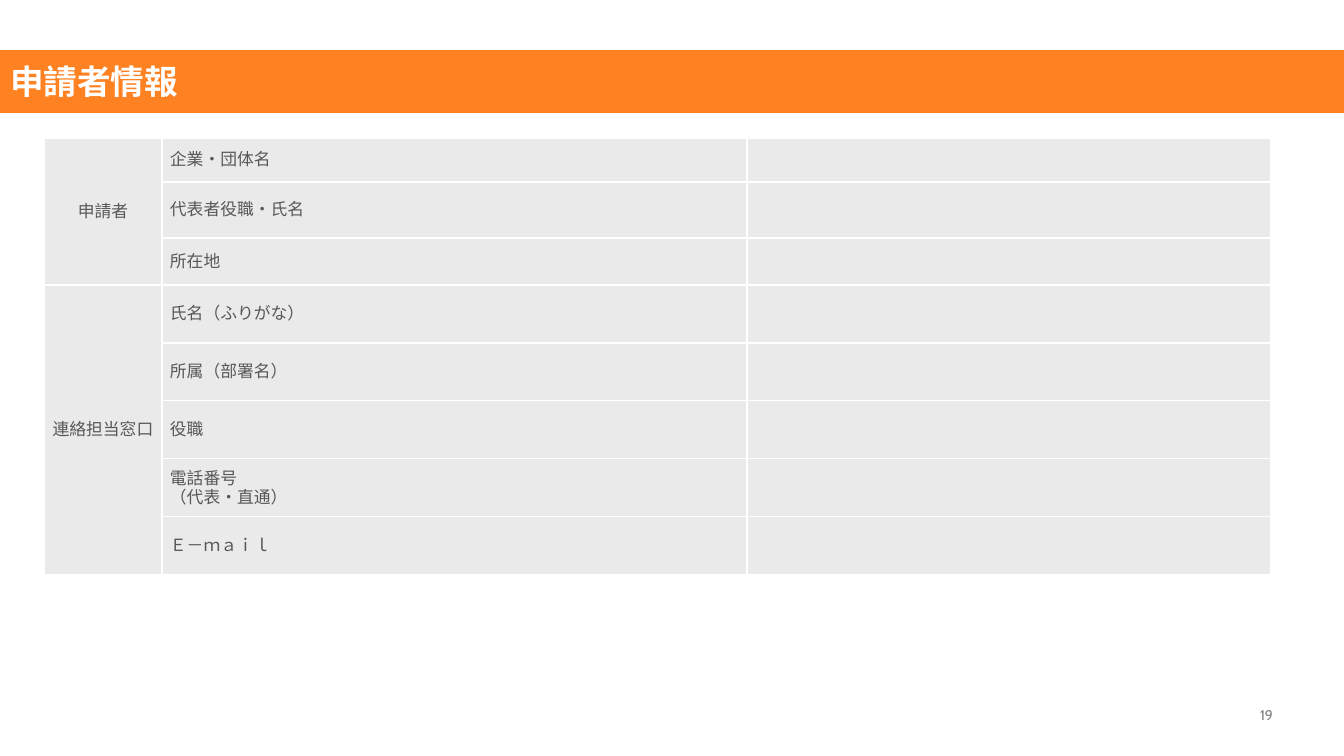
from dataclasses import dataclass

from lxml import etree
from pptx import Presentation
from pptx.dml.color import RGBColor
from pptx.enum.text import MSO_ANCHOR, PP_ALIGN
from pptx.oxml.ns import qn
from pptx.util import Emu, Pt

MIDDLE, BOTTOM = MSO_ANCHOR.MIDDLE, MSO_ANCHOR.BOTTOM
LEFT, RIGHT = PP_ALIGN.LEFT, PP_ALIGN.RIGHT
CENTER, JUSTIFY = PP_ALIGN.CENTER, PP_ALIGN.JUSTIFY
EMU_PER_PX = 914400 / 100.8


@dataclass(frozen=True)
class Theme:
    banner: str = "FF8222"
    white: str = "FFFFFF"
    cell: str = "EAEAEA"
    text: str = "575757"
    muted: str = "808080"
    title_font: str = "Noto Sans CJK JP"
    table_font: str = "Arial"
    number_font: str = "Cabin"
    title_size: int = 24
    table_size: int = 12
    number_size: int = 10
    border_width: int = 1


THEME = Theme()
COLUMN_WIDTHS = [118, 585, 524]
ROW_HEIGHTS = [44, 56, 47] + [58] * 5
SECTIONS = {
    "申請者": ["企業・団体名", "代表者役職・氏名", "所在地"],
    "連絡担当窓口": [
        "氏名（ふりがな）",
        "所属（部署名）",
        "役職",
        "電話番号\n（代表・直通）",
        "Ｅ－ｍａｉｌ",
    ],
}


def px(length):
    return Emu(round(length * EMU_PER_PX))


def set_all(target, values):
    for name, value in values.items():
        setattr(target, name, value)


def write_text(frame, text, font, size, color, align, bold=False):
    """Fill a text frame; each line of text becomes a paragraph."""
    frame.text = text
    for para in frame.paragraphs:
        para.alignment = align
        for span in para.runs:
            set_all(span.font, {"name": font, "size": Pt(size), "bold": bold})
            span.font.color.rgb = RGBColor.from_string(color)
            east_asian = etree.SubElement(span.font._element, qn("a:ea"))
            east_asian.set("typeface", font)


def add_banner(page, text):
    title = page.shapes.title
    set_all(title, {"left": px(0), "top": px(50), "width": px(1344), "height": px(63)})
    title.fill.solid()
    title.fill.fore_color.rgb = RGBColor.from_string(THEME.banner)
    set_all(title.text_frame, {"vertical_anchor": MIDDLE, "word_wrap": True})
    write_text(title.text_frame, text, THEME.title_font, THEME.title_size,
               THEME.white, LEFT, bold=True)


def add_borders(cell):
    properties = cell._tc.get_or_add_tcPr()
    for side in ("lnL", "lnR", "lnT", "lnB"):
        line = etree.SubElement(properties, qn(f"a:{side}"), w=str(Pt(THEME.border_width)))
        fill = etree.SubElement(line, qn("a:solidFill"))
        etree.SubElement(fill, qn("a:srgbClr"), val=THEME.white)


def style_cell(cell):
    add_borders(cell)
    cell.fill.solid()
    cell.fill.fore_color.rgb = RGBColor.from_string(THEME.cell)
    set_all(cell, {
        "vertical_anchor": MIDDLE,
        "margin_left": px(8), "margin_right": px(8),
        "margin_top": 0, "margin_bottom": 0,
    })


def write_cell(cell, text, align):
    write_text(cell.text_frame, text, THEME.table_font, THEME.table_size,
               THEME.text, align)


def add_applicant_table(page):
    frame = page.shapes.add_table(
        len(ROW_HEIGHTS), len(COLUMN_WIDTHS), px(44), px(138),
        px(sum(COLUMN_WIDTHS)), px(sum(ROW_HEIGHTS)))
    table = frame.table
    set_all(table, {"first_row": False, "horz_banding": False})
    for column, width in zip(table.columns, COLUMN_WIDTHS):
        column.width = px(width)
    for row, height in zip(table.rows, ROW_HEIGHTS):
        row.height = px(height)
    for cell in table.iter_cells():
        style_cell(cell)
        write_cell(cell, "", JUSTIFY)
        # An empty cell must not force its row taller than planned.
        cell.text_frame.paragraphs[0].font.size = Pt(THEME.table_size)

    first = 0
    for section, labels in SECTIONS.items():
        heading = table.cell(first, 0)
        heading.merge(table.cell(first + len(labels) - 1, 0))
        heading._tc.get_or_add_tcPr().set("vert", "eaVert")
        write_cell(heading, section, CENTER)
        for row, label in enumerate(labels, first):
            write_cell(table.cell(row, 1), label, JUSTIFY)
        first += len(labels)


def add_page_number(page, number):
    box = page.shapes.add_textbox(px(1231), px(706), px(42), px(17))
    set_all(box.text_frame, {
        "vertical_anchor": BOTTOM, "word_wrap": True,
        "margin_left": 0, "margin_right": 0, "margin_top": 0, "margin_bottom": 0,
    })
    write_text(box.text_frame, number, THEME.number_font, THEME.number_size,
               THEME.muted, RIGHT)


def main():
    deck = Presentation()
    set_all(deck, {"slide_width": px(1344), "slide_height": px(756)})
    page = deck.slides.add_slide(deck.slide_layouts[5])
    add_banner(page, "申請者情報")
    add_applicant_table(page)
    add_page_number(page, "19")
    deck.save("out.pptx")


if __name__ == "__main__":
    main()
